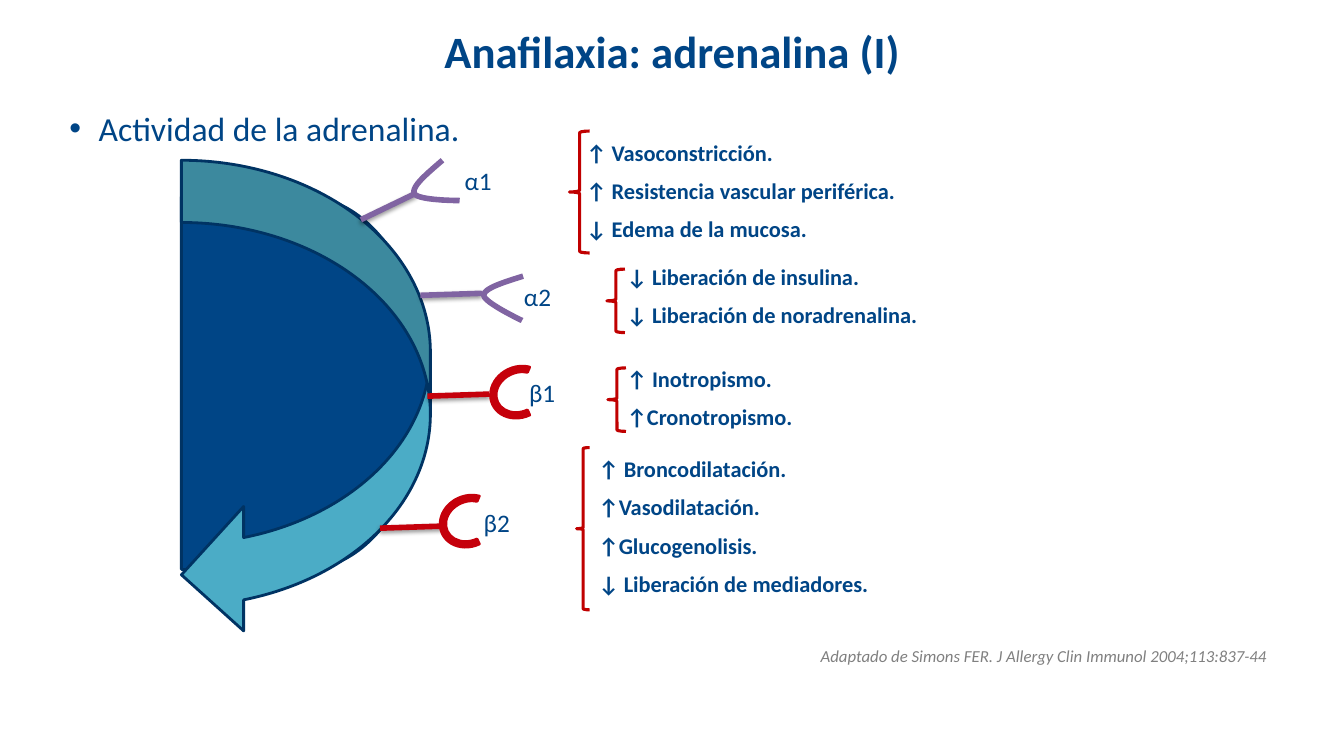
from lxml.etree import SubElement
from pptx import Presentation
from pptx.dml.color import RGBColor
from pptx.enum.shapes import MSO_CONNECTOR, MSO_SHAPE
from pptx.enum.text import MSO_ANCHOR, PP_ALIGN
from pptx.oxml.ns import qn
from pptx.util import Inches, Pt

HUES = {
    "navy": "004586", "edge": "003363", "sky": "4BACC6", "plum": "8064A2",
    "red": "C5000B", "brace": "C00000", "grey": "808080", "black": "000000",
}
COLS, ROWS = 133.33, 75  # square cells, ten to the inch
STEPS = 16  # pieces per curve


def bend(p, a, b, q):
    """Points of a cubic curve from p to q, without p."""
    for n in range(1, STEPS + 1):
        t = n / STEPS
        s = 1 - t
        yield tuple(s**3 * i + 3 * s * s * t * j + 3 * s * t * t * k + t**3 * m
                    for i, j, k, m in zip(p, a, b, q))


class Board:
    def __init__(self, deck, font="Calibri"):
        self.font = font
        self.wide, self.high = deck.slide_width, deck.slide_height
        self.items = deck.slides.add_slide(deck.slide_layouts[6]).shapes

    def place(self, x, y):
        return round(x * self.wide / COLS), round(y * self.high / ROWS)

    def hue(self, name):
        return RGBColor.from_string(HUES[name])

    def stroke(self, item, color, width):
        item.line.color.rgb = self.hue(color)
        item.line.width = Pt(width)

    def text(self, box, text, size=16, color="navy", bold=False, slant=False,
             align=PP_ALIGN.LEFT, anchor=MSO_ANCHOR.TOP, gap=8, wrap=True,
             bullet=None):
        item = self.items.add_textbox(*self.place(*box[:2]), *self.place(*box[2:]))
        frame = item.text_frame
        frame.word_wrap = wrap
        frame.vertical_anchor = anchor
        for n, line in enumerate(text.split("\n")):
            para = frame.add_paragraph() if n else frame.paragraphs[0]
            para.alignment = align
            if n:
                para.space_before = Pt(gap)
            if bullet:
                props = para._p.get_or_add_pPr()
                props.set("marL", str(Inches(0.88)))
                props.set("indent", str(Inches(-0.29)))
                SubElement(props, qn("a:buFont"), typeface="Arial")
                SubElement(props, qn("a:buChar"), char=bullet)
            run = para.add_run()
            run.text = line
            run.font.name, run.font.size = self.font, Pt(size)
            run.font.bold, run.font.italic = bold, slant
            run.font.color.rgb = self.hue(color)

    def shape(self, kind, box, line, width=2, fill=None, turn=0, adjust=()):
        item = self.items.add_shape(kind, *self.place(*box[:2]), *self.place(*box[2:]))
        item.shadow.inherit = False
        item.rotation = turn
        for n, value in enumerate(adjust):
            item.adjustments[n] = value
        if fill:
            item.fill.solid()
            item.fill.fore_color.rgb = self.hue(fill)
        else:
            item.fill.background()
        self.stroke(item, line, width)

    def stem(self, start, end, color):
        item = self.items.add_connector(
            MSO_CONNECTOR.STRAIGHT, *self.place(*start), *self.place(*end))
        self.stroke(item, color, 4)
        glow = SubElement(item._element.spPr, qn("a:effectLst"))
        cast = SubElement(glow, qn("a:outerShdw"), blurRad=str(Pt(3.1)),
                          dist=str(Pt(1.6)), dir="5400000", rotWithShape="0")
        tint = SubElement(cast, qn("a:srgbClr"), val=HUES["black"])
        SubElement(tint, qn("a:alpha"), val="38000")

    def fork(self, start, curves, color):
        spots = [start]
        for curve in curves:
            spots += bend(spots[-1], *curve)
        spots = [self.place(*spot) for spot in spots]
        path = self.items.build_freeform(*spots[0])
        path.add_line_segments(spots[1:], close=False)
        item = path.convert_to_shape()
        item.shadow.inherit = False
        item.fill.background()
        self.stroke(item, color, 4)


def main():
    deck = Presentation()
    deck.slide_width, deck.slide_height = Inches(13.33), Inches(7.5)
    board = Board(deck)

    # Heading, topic and citation
    board.text((6.7, 1.7, 120, 6.6), "Anafilaxia: adrenalina (I)", size=32,
               bold=True, align=PP_ALIGN.CENTER, anchor=MSO_ANCHOR.MIDDLE)
    board.text((0, 10.2, 126.7, 50.2), "Actividad de la adrenalina.", size=24,
               bullet="•")
    board.text((0, 63.6, 126.7, 3.2),
               "Adaptado de Simons FER. J Allergy Clin Immunol 2004;113:837-44",
               size=12, color="grey", slant=True, align=PP_ALIGN.RIGHT)

    # Effects, each list with its brace
    effects = [
        ((57.2, 13.3, 38.6, 11.8), (56.5, 13, 2, 12.1),
         "↑ Vasoconstricción.\n↑ Resistencia vascular periférica.\n"
         "↓ Edema de la mucosa."),
        ((61.2, 25.6, 38.6, 7.7), (60.2, 26.7, 1.8, 6.3),
         "↓ Liberación de insulina.\n↓ Liberación de noradrenalina."),
        ((61.2, 35.7, 38.6, 7.7), (60.3, 36.5, 1.8, 6.3),
         "↑ Inotropismo.\n↑Cronotropismo."),
        ((58.4, 44.7, 38.6, 15.8), (57.2, 44.4, 1.3, 16.1),
         "↑ Broncodilatación.\n↑Vasodilatación.\n↑Glucogenolisis.\n"
         "↓ Liberación de mediadores."),
    ]
    for box, brace, words in effects:
        board.text(box, words, bold=True)
        board.shape(MSO_SHAPE.LEFT_BRACE, brace, "brace", 2.25)

    # Cell and its curved arrow
    board.shape(MSO_SHAPE.FLOWCHART_DELAY, (18, 19.5, 24.4, 37), "edge", fill="navy")
    board.shape(MSO_SHAPE.CURVED_LEFT_ARROW, (18, 15.9, 24.7, 47.3), "edge", fill="sky")

    # Alpha receptors: stem and fork
    alphas = [
        ((35.8, 21.8), (41.2, 19.2), (43.9, 15.9),
         [((42.4, 17.2), (40.8, 18.5), (41.1, 19.2)),
          ((41.4, 19.9), (45.6, 19.9), (45.6, 19.9))]),
        ((41.7, 29.3), (47.8, 29.1), (51.9, 27.4),
         [((50, 28), (48, 28.6), (48, 29.3)),
          ((48, 30), (51.8, 31.8), (51.8, 31.8))]),
    ]
    for start, end, tip, curves in alphas:
        board.stem(start, end, "plum")
        board.fork(tip, curves, "plum")

    # Beta receptors: stem and cup
    for x, y, left, top in [(42.4, 39.3, 49, 36), (37.7, 52.4, 44, 48.8)]:
        board.stem((x, y), (x + 6.1, y - 0.2), "red")
        board.shape(MSO_SHAPE.BLOCK_ARC, (left, top, 5, 5.8), "red", fill="red",
                    turn=245.1, adjust=(108, 28.63, 0.11))

    # Receptor names
    for name, x, y in [("α1", 45.1, 15.9), ("α2", 51, 27.4),
                       ("β1", 51.5, 36.9), ("β2", 47, 49.8)]:
        board.text((x, y, 4.7, 4), name, size=18, wrap=False)

    deck.save("out.pptx")


if __name__ == "__main__":
    main()
